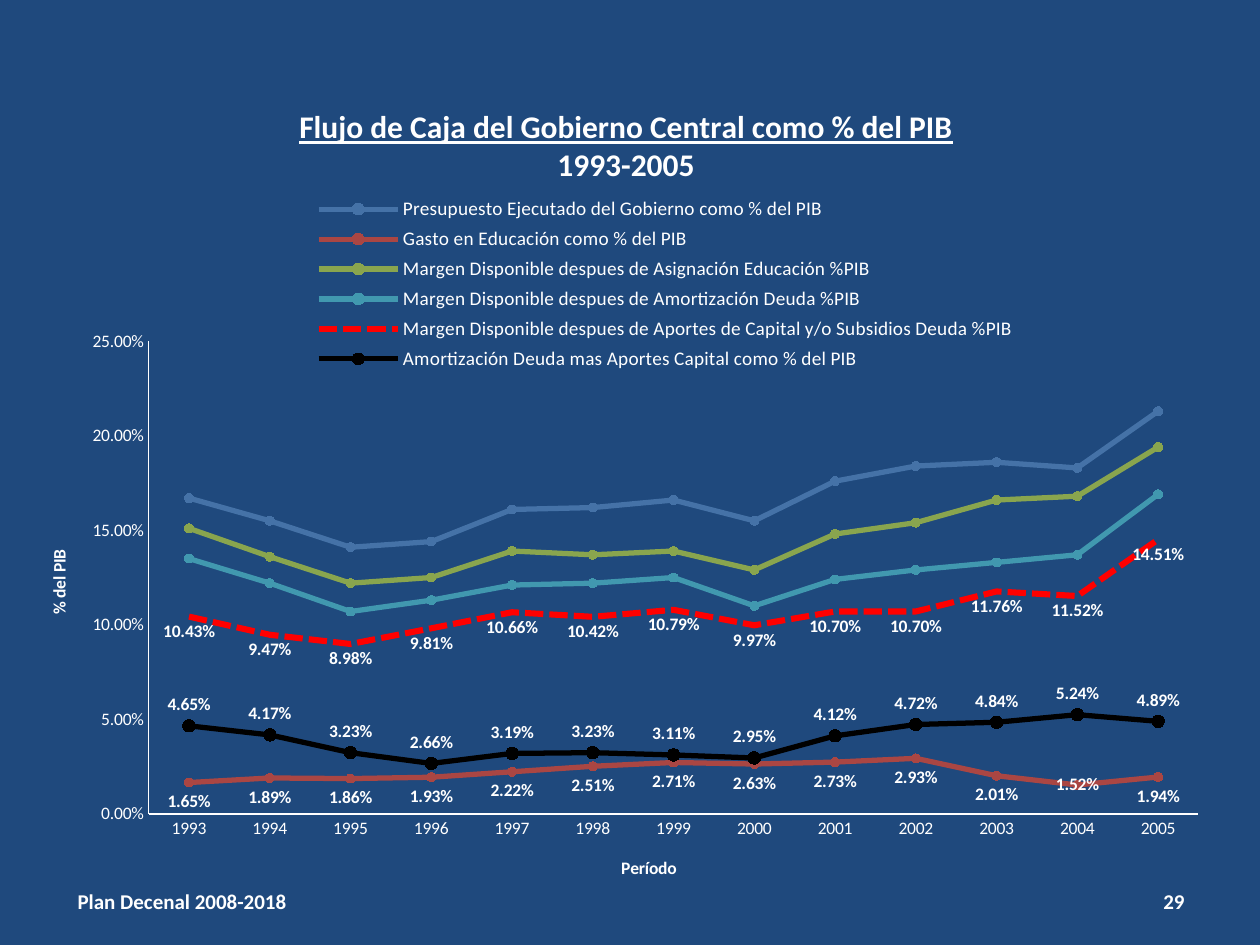
from dataclasses import dataclass
from typing import Optional

from lxml.etree import SubElement
from pptx import Presentation
from pptx.chart.data import CategoryChartData
from pptx.dml.color import RGBColor
from pptx.enum.chart import (XL_CHART_TYPE, XL_LABEL_POSITION, XL_LEGEND_POSITION,
                             XL_MARKER_STYLE, XL_TICK_MARK)
from pptx.enum.dml import MSO_LINE
from pptx.enum.text import MSO_ANCHOR, PP_ALIGN
from pptx.oxml import parse_xml
from pptx.oxml.ns import nsdecls, qn
from pptx.util import Inches, Pt


@dataclass(frozen=True)
class Theme:
    font: str = "Calibri"
    background: str = "1F497D"
    text: str = "FFFFFF"
    title: float = 18
    footer: float = 12
    legend: float = 11
    chart: float = 10


@dataclass(frozen=True)
class Flow:
    name: str
    percents: tuple
    color: str
    width: float = 3
    marker: int = 5
    labels: Optional[XL_LABEL_POSITION] = None
    dashed: bool = False


@dataclass(frozen=True)
class Footer:
    text: str
    left: float
    width: float
    align: PP_ALIGN


THEME = Theme()
PERCENT = "0.00%"
YEARS = [str(year) for year in range(1993, 2006)]
FLOWS = (
    Flow("Presupuesto Ejecutado del Gobierno como % del PIB",
         (16.7, 15.5, 14.1, 14.4, 16.1, 16.2, 16.6, 15.5, 17.6, 18.4, 18.6, 18.3, 21.3),
         "4572A7"),
    Flow("Gasto en Educación como % del PIB",
         (1.65, 1.89, 1.86, 1.93, 2.22, 2.51, 2.71, 2.63, 2.73, 2.93, 2.01, 1.52, 1.94),
         "AA4643", labels=XL_LABEL_POSITION.BELOW),
    Flow("Margen Disponible despues de Asignación Educación %PIB",
         (15.1, 13.6, 12.2, 12.5, 13.9, 13.7, 13.9, 12.9, 14.8, 15.4, 16.6, 16.8, 19.4),
         "89A54E"),
    Flow("Margen Disponible despues de Amortización Deuda %PIB",
         (13.5, 12.2, 10.7, 11.3, 12.1, 12.2, 12.5, 11.0, 12.4, 12.9, 13.3, 13.7, 16.9),
         "4198AF"),
    Flow("Margen Disponible despues de Aportes de Capital y/o Subsidios Deuda %PIB",
         (10.43, 9.47, 8.98, 9.81, 10.66, 10.42, 10.79, 9.97, 10.70, 10.70, 11.76, 11.52, 14.51),
         "FF0000", width=3.5, marker=0, labels=XL_LABEL_POSITION.BELOW, dashed=True),
    Flow("Amortización Deuda mas Aportes Capital como % del PIB",
         (4.65, 4.17, 3.23, 2.66, 3.19, 3.23, 3.11, 2.95, 4.12, 4.72, 4.84, 5.24, 4.89),
         "000000", marker=7, labels=XL_LABEL_POSITION.ABOVE),
)
FOOTERS = (
    Footer("Plan Decenal 2008-2018", 0.47, 1.95, PP_ALIGN.CENTER),
    Footer("29", 7.17, 2.33, PP_ALIGN.RIGHT),
)


def style_font(font, size: float, bold: bool = False) -> None:
    """Apply the theme's typeface and text colour."""
    font.name, font.size, font.bold = THEME.font, Pt(size), bold
    font.color.rgb = RGBColor.from_string(THEME.text)


def place(element, x: float, y: float, w: float = 0, h: float = 0) -> None:
    """Give a chart part a manual position in fractions of the chart."""
    for old in element.findall(qn("c:layout")):
        element.remove(old)
    layout = parse_xml(f"<c:layout {nsdecls('c')}/>")
    manual = SubElement(layout, qn("c:manualLayout"))
    overlay = element.find(qn("c:overlay"))
    settings = [("xMode", "edge"), ("yMode", "edge"), ("x", x), ("y", y)]
    if w:
        settings += [("w", w), ("h", h)]
    if overlay is None:
        settings.insert(0, ("layoutTarget", "inner"))
        element.insert(0, layout)
    else:
        overlay.addprevious(layout)
    for tag, setting in settings:
        SubElement(manual, qn(f"c:{tag}")).set("val", str(setting))


def style_flow(series, flow: Flow) -> None:
    """Format one line, its markers and its labels."""
    color = RGBColor.from_string(flow.color)
    series.smooth = False
    series.format.line.color.rgb = color
    series.format.line.width = Pt(flow.width)
    if flow.dashed:
        series.format.line.dash_style = MSO_LINE.SQUARE_DOT
    if flow.marker:
        series.marker.style = XL_MARKER_STYLE.CIRCLE
        series.marker.size = flow.marker
        series.marker.format.fill.solid()
        series.marker.format.fill.fore_color.rgb = color
        series.marker.format.line.color.rgb = color
    else:
        series.marker.style = XL_MARKER_STYLE.NONE
    if flow.labels is not None:
        labels = series.data_labels
        labels.show_value = True
        labels.position = flow.labels
        labels.number_format, labels.number_format_is_linked = PERCENT, False
        style_font(labels.font, THEME.chart, bold=True)


def style_axis(axis, title: str, x: float, y: float) -> None:
    """Format an axis and place its title."""
    axis.has_major_gridlines = False
    axis.major_tick_mark = axis.minor_tick_mark = XL_TICK_MARK.NONE
    axis.format.line.color.rgb = RGBColor.from_string(THEME.text)
    axis.format.line.width = Pt(1)
    style_font(axis.tick_labels.font, THEME.chart)
    frame = axis.axis_title.text_frame
    frame.text = title
    style_font(frame.paragraphs[0].runs[0].font, THEME.chart, bold=True)
    place(axis.axis_title._element, x, y)


def add_flow_chart(page) -> None:
    """Add the cash flow chart."""
    data = CategoryChartData(number_format=PERCENT)
    data.categories = YEARS
    for flow in FLOWS:
        data.add_series(flow.name, [round(percent / 100, 4) for percent in flow.percents])
    chart = page.shapes.add_chart(XL_CHART_TYPE.LINE_MARKERS, Inches(0.26), Inches(0.62),
                                  Inches(9.48), Inches(6.41), data).chart
    style_font(chart.font, THEME.chart)
    plot = chart.plots[0]
    plot.vary_by_categories = False
    for series, flow in zip(plot.series, FLOWS):
        style_flow(series, flow)
    education_label = plot.series[1].points[YEARS.index("2004")].data_label
    education_label.position = XL_LABEL_POSITION.CENTER
    style_font(education_label.font, THEME.chart, bold=True)

    style_axis(chart.category_axis, "Período", 0.49, 0.96)
    style_axis(chart.value_axis, "% del PIB", 0.01, 0.58)
    values = chart.value_axis
    values.minimum_scale, values.maximum_scale, values.major_unit = 0, 0.25, 0.05
    values.tick_labels.number_format = PERCENT
    values.tick_labels.number_format_is_linked = False

    frame = chart.chart_title.text_frame
    frame.text = "Flujo de Caja del Gobierno Central como % del PIB\n1993-2005"
    for para in frame.paragraphs:
        style_font(para.runs[0].font, THEME.title, bold=True)
    frame.paragraphs[0].runs[0].font.underline = True
    place(chart.chart_title._element, 0.22, 0.03)

    chart.has_legend = True
    chart.legend.position = XL_LEGEND_POSITION.TOP
    chart.legend.include_in_layout = False
    style_font(chart.legend.font, THEME.legend)
    place(chart.legend._element, 0.23, 0.14, 0.6, 0.23)
    place(chart._chartSpace.chart.plotArea, 0.097, 0.326, 0.879, 0.585)


def add_footer(page, footer: Footer) -> None:
    """Add one line of footer text."""
    box = page.shapes.add_textbox(Inches(footer.left), Inches(6.95),
                                  Inches(footer.width), Inches(0.4))
    frame = box.text_frame
    frame.word_wrap = True
    frame.vertical_anchor = MSO_ANCHOR.MIDDLE
    frame.text = footer.text
    para = frame.paragraphs[0]
    para.alignment = footer.align
    style_font(para.runs[0].font, THEME.footer, bold=True)


def main() -> None:
    """Build and save the slide."""
    deck = Presentation()
    deck.slide_width, deck.slide_height = Inches(10), Inches(7.5)
    page = deck.slides.add_slide(deck.slide_layouts[6])
    page.background.fill.solid()
    page.background.fill.fore_color.rgb = RGBColor.from_string(THEME.background)
    for footer in FOOTERS:
        add_footer(page, footer)
    add_flow_chart(page)
    deck.save("out.pptx")


if __name__ == "__main__":
    main()
